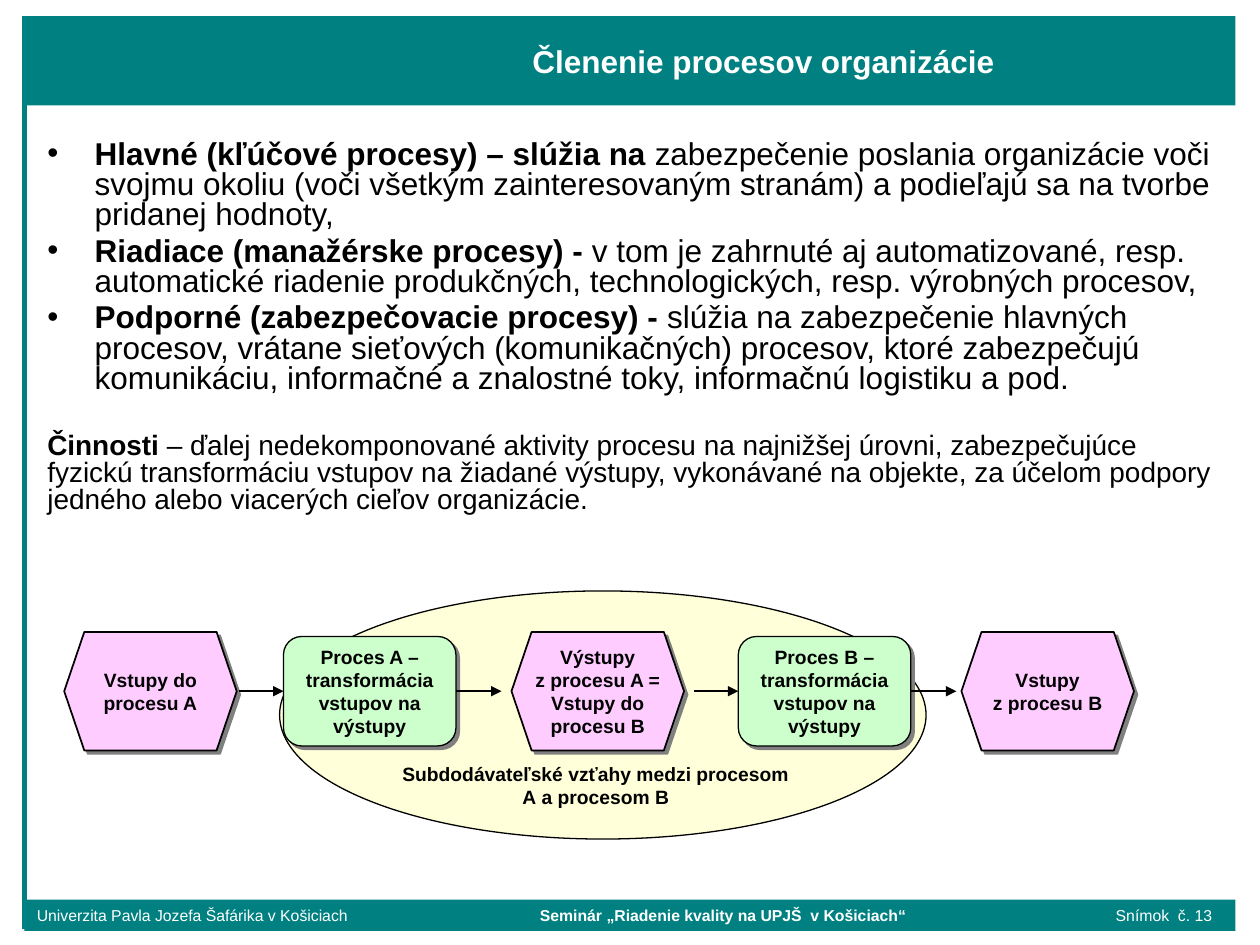
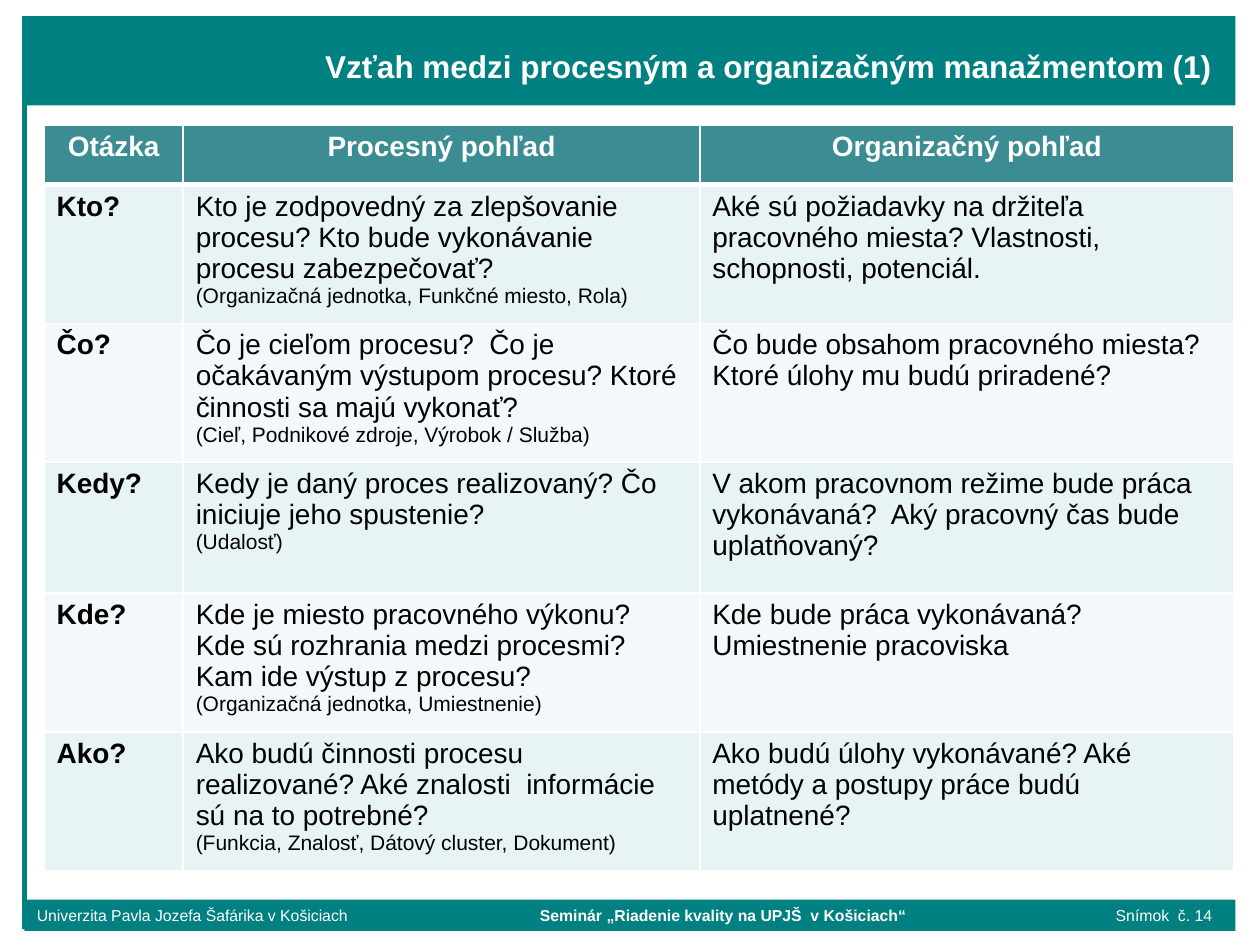
from dataclasses import dataclass
from typing import NamedTuple, Optional

import lxml.etree
import pptx
import pptx.dml.color
import pptx.enum.dml
import pptx.enum.shapes
import pptx.enum.text
import pptx.oxml
import pptx.oxml.ns
import pptx.util

Pt = pptx.util.Pt
qn = pptx.oxml.ns.qn
Preset = pptx.enum.shapes.MSO_SHAPE
Align = pptx.enum.text.PP_ALIGN
Anchor = pptx.enum.text.MSO_ANCHOR


@dataclass(frozen=True)
class Theme:
    font: str = "Arial"
    band: str = "008080"
    white: str = "FFFFFF"
    black: str = "000000"
    ellipse: str = "FFFFD9"
    state: str = "FFCCFF"
    process: str = "CCFFCC"
    shadow: str = "808080"
    header: str = "3C8C93"
    stripes: tuple = ("E7F3F4", "F3F9FA")
    title_size: float = 18
    body_size: float = 16
    note_size: float = 12
    label_size: float = 11
    footer_size: float = 9


THEME = Theme()


class Box(NamedTuple):
    left: float
    top: float
    width: float
    height: float

    def lengths(self) -> list:
        return [Pt(value) for value in self]


class Step(NamedTuple):
    center: float
    label: str
    is_process: bool


class Arrow(NamedTuple):
    start: float
    end: float
    source: Optional[int] = None
    target: Optional[int] = None


class Point(NamedTuple):
    lead: str
    text: str
    size: float
    space: float
    bullet: bool = True


class Question(NamedTuple):
    word: str
    process: str
    note: str
    organization: str


NO_BREAK_SPACE = chr(160)
FRAME_LEFT = 14
AXIS = 395
STEP_WIDTH = 98.6
STATE_HEIGHT = 67.7
PROCESS_HEIGHT = 62.6
STEPS = [
    Step(86, "Vstupy do procesu A", False),
    Step(211.3, "Proces A – transformácia vstupov na výstupy", True),
    Step(341.6, f"Výstupy z{NO_BREAK_SPACE}procesu A = Vstupy do procesu B", False),
    Step(471.2, "Proces B – transformácia vstupov na výstupy", True),
    Step(598.7, f"Vstupy z{NO_BREAK_SPACE}procesu B", False),
]
ARROWS = [
    Arrow(136.8, 162, target=1),
    Arrow(260.6, 286.6, source=1),
    Arrow(396.7, 421.9, target=3),
    Arrow(520.5, 546.5, source=3),
]
POINTS = [
    Point("Hlavné (kľúčové procesy) – slúžia na ",
          "zabezpečenie poslania organizácie voči svojmu okoliu (voči všetkým zainteresovaným "
          "stranám) a podieľajú sa na tvorbe pridanej hodnoty,", THEME.title_size, 0),
    Point("Riadiace (manažérske procesy) - ",
          "v tom je zahrnuté aj automatizované, resp. automatické riadenie produkčných, "
          "technologických, resp. výrobných procesov,", THEME.title_size, 3.6),
    Point("Podporné (zabezpečovacie procesy) - ",
          "slúžia na zabezpečenie hlavných procesov, vrátane sieťových (komunikačných) procesov, "
          "ktoré zabezpečujú komunikáciu, informačné a znalostné toky, informačnú logistiku a pod.",
          THEME.title_size, 3.6),
    Point("Činnosti ",
          "– ďalej nedekomponované aktivity procesu na najnižšej úrovni, zabezpečujúce fyzickú "
          "transformáciu vstupov na žiadané výstupy, vykonávané na objekte, za účelom podpory "
          "jedného alebo viacerých cieľov organizácie.", THEME.body_size, 22, False),
]
HEADINGS = ["Otázka", "Procesný pohľad", "Organizačný pohľad"]
QUESTIONS = [
    Question("Kto?",
             "Kto je zodpovedný za zlepšovanie procesu? Kto bude vykonávanie procesu zabezpečovať?",
             "(Organizačná jednotka, Funkčné miesto, Rola)",
             "Aké sú požiadavky na držiteľa pracovného miesta? Vlastnosti, schopnosti, potenciál."),
    Question("Čo?",
             "Čo je cieľom procesu?  Čo je očakávaným výstupom procesu? Ktoré činnosti sa majú vykonať?",
             "(Cieľ, Podnikové zdroje, Výrobok / Služba)",
             "Čo bude obsahom pracovného miesta?\nKtoré úlohy mu budú priradené?"),
    Question("Kedy?",
             "Kedy je daný proces realizovaný? Čo iniciuje jeho spustenie?",
             "(Udalosť)",
             "V akom pracovnom režime bude práca vykonávaná?  Aký pracovný čas bude uplatňovaný?"),
    Question("Kde?",
             "Kde je miesto pracovného výkonu? Kde sú rozhrania medzi procesmi? Kam ide výstup z procesu?",
             "(Organizačná jednotka, Umiestnenie)",
             "Kde bude práca vykonávaná? Umiestnenie pracoviska"),
    Question("Ako?",
             "Ako budú činnosti procesu realizované? Aké znalosti  informácie sú na to potrebné?",
             "(Funkcia, Znalosť, Dátový cluster, Dokument)",
             "Ako budú úlohy vykonávané? Aké metódy a postupy práce budú uplatnené?"),
]
COLUMN_WIDTHS = [79.5, 295.2, 305.3]
ROW_HEIGHTS = [34, 78.7, 78.7, 75, 79, 79]


def rgb(color: str) -> pptx.dml.color.RGBColor:
    return pptx.dml.color.RGBColor.from_string(color)


def style_run(run, size: float, color: str = THEME.black, bold: bool = False) -> None:
    run.font.name = THEME.font
    run.font.size = Pt(size)
    run.font.bold = bold
    run.font.color.rgb = rgb(color)


def add_shape(slide, preset, box: Box, fill: str, line_width: float = 0):
    shape = slide.shapes.add_shape(preset, *box.lengths())
    shape.shadow.inherit = False
    shape.fill.solid()
    shape.fill.fore_color.rgb = rgb(fill)
    if line_width:
        shape.line.color.rgb = rgb(THEME.black)
        shape.line.width = Pt(line_width)
    else:
        shape.line.fill.background()
    return shape


def add_label(slide, box: Box, text: str, size: float, color: str = THEME.black) -> None:
    text_frame = slide.shapes.add_textbox(*box.lengths()).text_frame
    text_frame.word_wrap = True
    text_frame.vertical_anchor = Anchor.MIDDLE
    text_frame.text = text
    paragraph = text_frame.paragraphs[0]
    paragraph.alignment = Align.CENTER
    style_run(paragraph.runs[0], size, color, True)


def add_line(slide, start: tuple, end: tuple, color: str, width: float):
    connector = slide.shapes.add_connector(
        pptx.enum.shapes.MSO_CONNECTOR.STRAIGHT, *[Pt(value) for value in start + end])
    connector.line.color.rgb = rgb(color)
    connector.line.width = Pt(width)
    lxml.etree.SubElement(connector._element.spPr, qn("a:effectLst"))
    return connector


def add_frame(slide, number: int, title: str, title_box: Box) -> None:
    add_line(slide, (FRAME_LEFT, 9.2), (FRAME_LEFT, 530.6), THEME.band, 3)
    footer = add_shape(slide, Preset.RECTANGLE, Box(FRAME_LEFT, 514, 692, 18), THEME.band)
    footer.text_frame.vertical_anchor = Anchor.MIDDLE
    paragraph = footer.text_frame.paragraphs[0]
    paragraph.alignment = Align.LEFT
    tabs = lxml.etree.SubElement(paragraph._p.get_or_add_pPr(), qn("a:tabLst"))
    for position in (287.5, 616.5):
        lxml.etree.SubElement(tabs, qn("a:tab"), pos=str(Pt(position)), algn="l")
    parts = [("Univerzita Pavla Jozefa Šafárika v Košiciach\t", False),
             ("Seminár „Riadenie kvality na UPJŠ  v Košiciach“\t", True),
             (f"Snímok  č. {number}", False)]
    for text, bold in parts:
        run = paragraph.add_run()
        run.text = text
        style_run(run, THEME.footer_size, THEME.white, bold)
    add_shape(slide, Preset.RECTANGLE, Box(FRAME_LEFT, 9.2, 692, 51), THEME.band)
    add_label(slide, title_box, title, THEME.title_size, THEME.white)


def add_points(slide, box: Box) -> None:
    text_frame = slide.shapes.add_textbox(*box.lengths()).text_frame
    text_frame.word_wrap = True
    for index, point in enumerate(POINTS):
        paragraph = text_frame.add_paragraph() if index else text_frame.paragraphs[0]
        if point.bullet:
            properties = paragraph._p.get_or_add_pPr()
            properties.set("marL", str(Pt(27)))
            properties.set("indent", str(-Pt(27)))
            lxml.etree.SubElement(properties, qn("a:buFont"), typeface=THEME.font)
            lxml.etree.SubElement(properties, qn("a:buChar"), char="•")
        paragraph.line_spacing = 0.8
        paragraph.space_before = Pt(point.space)
        for text, bold in ((point.lead, True), (point.text, False)):
            run = paragraph.add_run()
            run.text = text
            style_run(run, point.size, bold=bold)


def add_drop_shadow(shape) -> None:
    effects = shape._element.spPr.find(qn("a:effectLst"))
    shadow = lxml.etree.SubElement(effects, qn("a:outerShdw"), dist=str(Pt(2.8)),
                                   dir="2700000", algn="ctr", rotWithShape="0")
    lxml.etree.SubElement(shadow, qn("a:srgbClr"), val=THEME.shadow)


def add_step(slide, step: Step):
    height = PROCESS_HEIGHT if step.is_process else STATE_HEIGHT
    box = Box(step.center - STEP_WIDTH / 2, AXIS - height / 2, STEP_WIDTH, height)
    if step.is_process:
        shape = add_shape(slide, Preset.ROUNDED_RECTANGLE, box, THEME.process, 0.75)
    else:
        shape = add_shape(slide, Preset.HEXAGON, box, THEME.state, 1)
        shape.adjustments[0] = 0.17
    add_drop_shadow(shape)
    label_box = Box(box.left, AXIS - 34, STEP_WIDTH, 68)
    add_label(slide, label_box, step.label, THEME.label_size)
    return shape


def add_arrow(slide, arrow: Arrow, shapes: list) -> None:
    connector = add_line(slide, (arrow.start, AXIS), (arrow.end, AXIS), THEME.black, 1)
    if arrow.source is not None:
        connector.begin_connect(shapes[arrow.source], 3)
    if arrow.target is not None:
        connector.end_connect(shapes[arrow.target], 1)
    lxml.etree.SubElement(connector.line._get_or_add_ln(), qn("a:tailEnd"), type="triangle")


def add_process_chain(slide) -> None:
    add_shape(slide, Preset.OVAL, Box(159.8, 337.7, 369.4, 141.8), THEME.ellipse, 0.75)
    add_label(slide, Box(210.2, 425.5, 260.6, 46),
              f"Subdodávateľské vzťahy medzi procesom A{NO_BREAK_SPACE}a{NO_BREAK_SPACE}procesom B",
              THEME.label_size)
    shapes = [add_step(slide, step) for step in STEPS]
    for arrow in ARROWS:
        add_arrow(slide, arrow, shapes)


def fill_cell(cell, text: str, fill: str, is_header: bool, bold: bool, note: str = "") -> None:
    cell.text_frame.text = f"{text}\n{note}" if note else text
    for paragraph in cell.text_frame.paragraphs:
        paragraph.alignment = Align.CENTER if is_header else Align.LEFT
        size = THEME.note_size if note and paragraph.text == note else THEME.body_size
        style_run(paragraph.runs[0], size, THEME.white if is_header else THEME.black, bold)
    properties = cell._tc.get_or_add_tcPr()
    for side in ("lnL", "lnR", "lnT", "lnB"):
        width = 3 if is_header and side == "lnB" else 1
        border = lxml.etree.SubElement(properties, qn(f"a:{side}"), w=str(Pt(width)))
        solid = lxml.etree.SubElement(border, qn("a:solidFill"))
        lxml.etree.SubElement(solid, qn("a:srgbClr"), val=THEME.white)
    cell.fill.solid()
    cell.fill.fore_color.rgb = rgb(fill)


def add_questions(slide) -> None:
    box = Box(25.2, 71.6, sum(COLUMN_WIDTHS), sum(ROW_HEIGHTS))
    table = slide.shapes.add_table(len(ROW_HEIGHTS), len(COLUMN_WIDTHS), *box.lengths()).table
    for column, width in zip(table.columns, COLUMN_WIDTHS):
        column.width = Pt(width)
    for row, height in zip(table.rows, ROW_HEIGHTS):
        row.height = Pt(height)
    for column, heading in enumerate(HEADINGS):
        fill_cell(table.cell(0, column), heading, THEME.header, True, True)
    for row, question in enumerate(QUESTIONS, 1):
        fill = THEME.stripes[(row - 1) % 2]
        fill_cell(table.cell(row, 0), question.word, fill, False, True)
        fill_cell(table.cell(row, 1), question.process, fill, False, False, question.note)
        fill_cell(table.cell(row, 2), question.organization, fill, False, False)


def main() -> None:
    presentation = pptx.Presentation()
    presentation.slide_width = Pt(720)
    presentation.slide_height = Pt(540)
    blank = presentation.slide_layouts[6]

    slide = presentation.slides.add_slide(blank)
    add_frame(slide, 13, "Členenie procesov organizácie", Box(167, 15.1, 538.6, 39.6))
    add_points(slide, Box(20, 77, 686.2, 238))
    add_process_chain(slide)

    slide = presentation.slides.add_slide(blank)
    add_frame(slide, 14, "Vzťah medzi procesným a organizačným manažmentom (1)",
              Box(172.8, 15.1, 532.8, 45.4))
    add_questions(slide)

    presentation.save("out.pptx")


if __name__ == "__main__":
    main()
